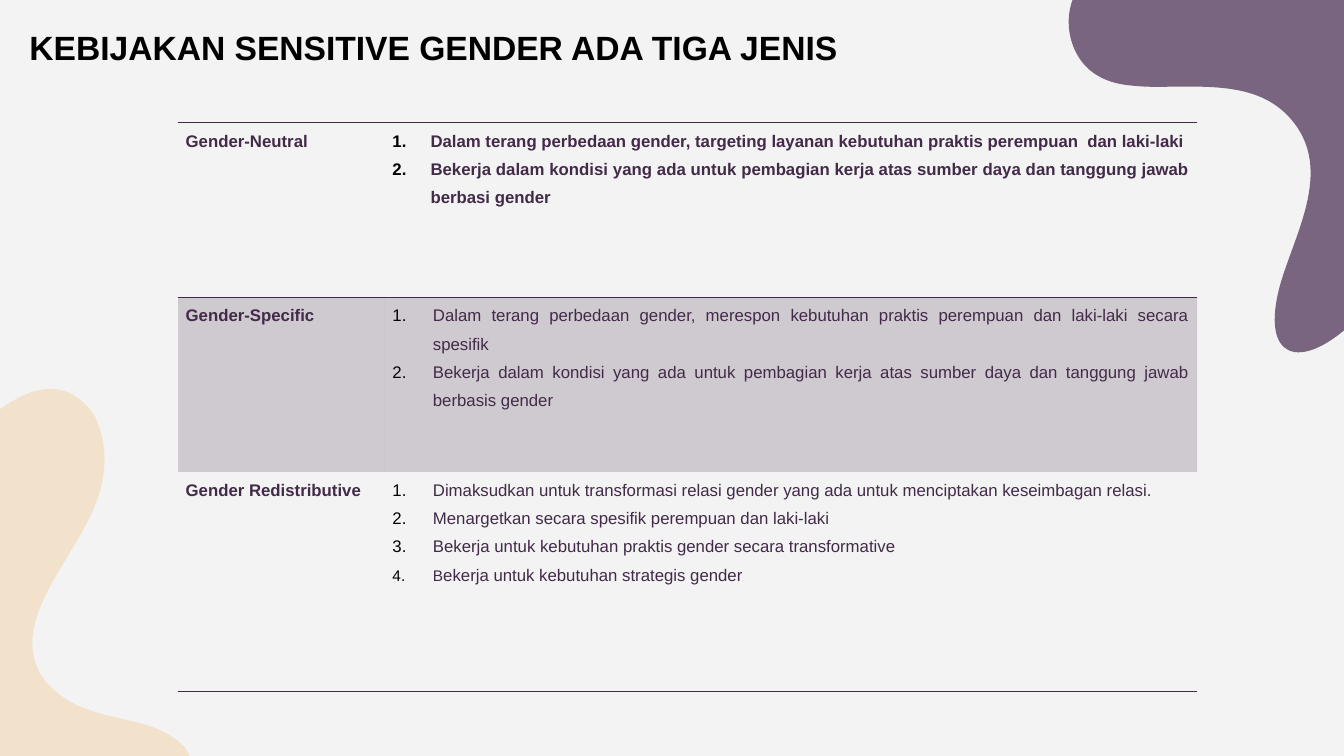
import math
from dataclasses import dataclass

import pptx
import pptx.dml.color
import pptx.enum.text
import pptx.oxml
import pptx.oxml.ns
import pptx.util
from pptx.util import Cm

Point = tuple[float, float]


@dataclass(frozen=True)
class Theme:
    font: str = "Arial"
    background: str = "F3F3F3"
    title: str = "000000"
    plum: str = "422A48"
    mauve: str = "79657F"
    sand: str = "F2E2CB"
    title_size: float = 24
    body_size: float = 12
    initial_size: float = 11
    band_alpha: int = 20
    rule_width: float = 1


@dataclass(frozen=True)
class Blob:
    """Frame (left, top, width, height) and Bezier outline as seen after turning, in units of 2.54 cm."""
    color: str
    frame: tuple[float, float, float, float]
    rotation: float
    outline: list[Point]


@dataclass(frozen=True)
class Policy:
    name: str
    points: list[str]
    height: float
    indent: float = 1.02
    bold: bool = False
    shaded: bool = False
    rules: tuple[str, ...] = ()
    small_initial: bool = False


THEME = Theme()
UNIT = Cm(2.54)

BLOBS = [
    Blob(THEME.sand, (-2.27, 4.53, 5.44, 3.48), 50.6, [
        (0.88, 4.05), (0.92, 4.09), (0.95, 4.14), (0.97, 4.2), (1.06, 4.43), (1.06, 4.7), (0.96, 4.97),
        (0.78, 5.45), (0.33, 5.91), (0.32, 6.37), (0.32, 6.53), (0.37, 6.66), (0.46, 6.77),
        (0.57, 6.89), (0.71, 6.99), (0.88, 7.04), (1.08, 7.12), (1.32, 7.14), (1.53, 7.22),
        (1.66, 7.27), (1.75, 7.33), (1.82, 7.4), (2.05, 7.69), (1.79, 8.12), (1.56, 8.59),
        (1.3, 9.1), (0.76, 9.4), (0.47, 9.05), (0.45, 9.01), (0.43, 8.98), (0.4, 8.94),
        (0.05, 8.25), (-0.38, 7.61), (-0.86, 7.01), (-1.18, 6.62), (-1.53, 6.26), (-1.9, 5.91),
        (-1.97, 5.85), (-2.04, 5.78), (-2.1, 5.71), (-2.18, 5.62), (-2.24, 5.51), (-2.25, 5.39),
        (-2.28, 5.16), (-2.09, 4.84), (-1.83, 4.79), (-1.62, 4.74), (-1.47, 4.89), (-1.26, 4.9),
        (-0.96, 4.92), (-0.64, 4.65), (-0.39, 4.41), (-0.14, 4.16), (0.16, 3.88), (0.47, 3.86),
        (0.65, 3.85), (0.78, 3.93), (0.88, 4.05)]),
    Blob(THEME.mauve, (10.47, -2.13, 4.52, 5.54), 203.4, [
        (12.77, 1.14), (12.43, 0.79), (11.87, 0.87), (11.38, 0.86), (11.21, 0.85), (11.05, 0.84), (10.91, 0.76),
        (10.58, 0.59), (10.5, 0.09), (10.75, -0.18), (10.96, -0.4), (11.31, -0.45), (11.48, -0.69),
        (11.63, -0.9), (11.61, -1.18), (11.7, -1.42), (11.83, -1.76), (12.19, -1.97), (12.56, -2.01),
        (12.92, -2.06), (13.29, -1.97), (13.64, -1.86), (14.28, -1.67), (14.91, -1.43), (15.51, -1.15),
        (15.59, -1.11), (15.67, -1.06), (15.69, -0.98), (15.71, -0.92), (15.68, -0.86), (15.66, -0.8),
        (15.09, 0.55), (14.51, 2.21), (13.4, 3.22), (12.9, 3.68), (12.5, 3.57), (12.7, 2.83),
        (12.85, 2.3), (13.26, 1.64), (12.77, 1.14)]),
]

POLICIES = [
    Policy("Gender-Neutral", [
        "Dalam terang perbedaan gender, targeting layanan kebutuhan praktis perempuan  dan laki-laki",
        "Bekerja dalam kondisi yang ada untuk pembagian kerja atas sumber daya dan tanggung jawab berbasi gender",
    ], 4.4, indent=0.96, bold=True, rules=("lnT", "lnB")),
    Policy("Gender-Specific", [
        "Dalam terang perbedaan gender, merespon kebutuhan praktis perempuan dan laki-laki secara spesifik",
        "Bekerja dalam kondisi yang ada untuk pembagian kerja atas sumber daya dan tanggung jawab berbasis gender",
    ], 4.4, shaded=True, rules=("lnT",)),
    Policy("Gender Redistributive", [
        "Dimaksudkan untuk transformasi relasi gender yang ada untuk menciptakan keseimbagan relasi.",
        "Menargetkan secara spesifik perempuan dan laki-laki",
        "Bekerja untuk kebutuhan praktis gender secara transformative",
        "Bekerja untuk kebutuhan strategis gender",
    ], 5.53, rules=("lnB",), small_initial=True),
]


def rgb(color: str) -> pptx.dml.color.RGBColor:
    return pptx.dml.color.RGBColor.from_string(color)


def add_xml(parent, tag: str, **attributes: str):
    child = pptx.oxml.parse_xml(f"<a:{tag} {pptx.oxml.ns.nsdecls('a')}/>")
    for key, value in attributes.items():
        child.set(key, value)
    parent.append(child)
    return child


def style(paragraph, size: float, color: str, bold: bool) -> None:
    font = paragraph.font
    font.name, font.size, font.bold = THEME.font, pptx.util.Pt(size), bold
    font.color.rgb = rgb(color)


# Curved corner shapes
def place_in_frame(point: Point, blob: Blob) -> Point:
    left, top, width, height = blob.frame
    angle = math.radians(-blob.rotation)
    dx, dy = point[0] - left - width / 2, point[1] - top - height / 2
    return (width / 2 + dx * math.cos(angle) - dy * math.sin(angle),
            height / 2 + dx * math.sin(angle) + dy * math.cos(angle))


def draw_blob(slide, blob: Blob) -> None:
    left, top, width, height = (length * UNIT for length in blob.frame)
    builder = slide.shapes.build_freeform(left, top)
    builder.add_line_segments([(left + width, top), (left + width, top + height), (left, top + height)])
    shape = builder.convert_to_shape()
    slide.shapes.title._element.addprevious(shape._element)

    # Bend the frame's outline into curves
    outline = shape._element.find(".//" + pptx.oxml.ns.qn("a:path"))
    for segment in list(outline):
        outline.remove(segment)
    for index, point in enumerate(blob.outline):
        if index == 0:
            segment = add_xml(outline, "moveTo")
        elif index % 3 == 1:
            segment = add_xml(outline, "cubicBezTo")
        x, y = place_in_frame(point, blob)
        add_xml(segment, "pt", x=str(round(x * UNIT)), y=str(round(y * UNIT)))
    add_xml(outline, "close")

    shape.rotation = blob.rotation
    shape.shadow.inherit = False
    shape.fill.solid()
    shape.fill.fore_color.rgb = rgb(blob.color)
    shape.line.fill.background()


# Table cells
def format_cell(cell, policy: Policy) -> None:
    cell.margin_left = cell.margin_right = Cm(0.19)
    cell.margin_top = cell.margin_bottom = 0
    properties = cell._tc.get_or_add_tcPr()
    for side in ("lnL", "lnR", "lnT", "lnB"):
        ruled = side in policy.rules
        line = add_xml(properties, side, w=str(pptx.util.Pt(THEME.rule_width)))
        fill = add_xml(line, "solidFill" if ruled else "noFill")
        if ruled:
            add_xml(fill, "srgbClr", val=THEME.plum)
    if policy.shaded:
        band = add_xml(add_xml(properties, "solidFill"), "srgbClr", val=THEME.plum)
        add_xml(band, "alpha", val=str(THEME.band_alpha * 1000))
    else:
        cell.fill.background()


def format_paragraph(paragraph, bold: bool) -> None:
    paragraph.alignment = pptx.enum.text.PP_ALIGN.JUSTIFY
    paragraph.line_spacing = 1.5
    style(paragraph, THEME.body_size, THEME.plum, bold)


def number_paragraph(paragraph, indent: float) -> None:
    properties = paragraph._p.get_or_add_pPr()
    properties.set("marL", str(Cm(indent)))
    properties.set("indent", str(-Cm(indent)))
    add_xml(add_xml(properties, "buClr"), "srgbClr", val=THEME.title)
    add_xml(properties, "buFont", typeface=THEME.font)
    add_xml(properties, "buAutoNum", type="arabicPeriod")


def fill_row(name_cell, points_cell, policy: Policy) -> None:
    for cell in (name_cell, points_cell):
        format_cell(cell, policy)
    name_cell.text = policy.name
    format_paragraph(name_cell.text_frame.paragraphs[0], True)

    points_cell.text = "\n".join(policy.points)
    for paragraph in points_cell.text_frame.paragraphs:
        number_paragraph(paragraph, policy.indent)
        format_paragraph(paragraph, policy.bold)
    if policy.small_initial:
        initial = paragraph.runs[0]
        remainder = paragraph.add_run()
        initial.text, remainder.text = initial.text[:1], initial.text[1:]
        initial.font.size = pptx.util.Pt(THEME.initial_size)


def main() -> None:
    deck = pptx.Presentation()
    deck.slide_width, deck.slide_height = Cm(33.87), Cm(19.05)
    slide = deck.slides.add_slide(deck.slide_layouts[5])
    slide.background.fill.solid()
    slide.background.fill.fore_color.rgb = rgb(THEME.background)
    for blob in BLOBS:
        draw_blob(slide, blob)

    # Title
    title = slide.shapes.title
    title.left, title.top, title.width, title.height = Cm(0.49), Cm(0.43), Cm(28.58), Cm(2.13)
    frame = title.text_frame
    frame.text = "KEBIJAKAN SENSITIVE GENDER ADA TIGA JENIS"
    frame.margin_left = frame.margin_right = frame.margin_top = frame.margin_bottom = Cm(0.25)
    frame.vertical_anchor = pptx.enum.text.MSO_ANCHOR.TOP
    frame.auto_size = pptx.enum.text.MSO_AUTO_SIZE.NONE
    frame.paragraphs[0].alignment = pptx.enum.text.PP_ALIGN.LEFT
    style(frame.paragraphs[0], THEME.title_size, THEME.title, True)

    # Policy table
    policies = slide.shapes.add_table(len(POLICIES), 2, Cm(4.49), Cm(3.09), Cm(25.68), Cm(14.33)).table
    policies.first_row = policies.horz_banding = False
    policies.columns[0].width, policies.columns[1].width = Cm(5.21), Cm(20.47)
    for row, policy in zip(policies.rows, POLICIES):
        row.height = Cm(policy.height)
        fill_row(*row.cells, policy)

    deck.save("out.pptx")


if __name__ == "__main__":
    main()
